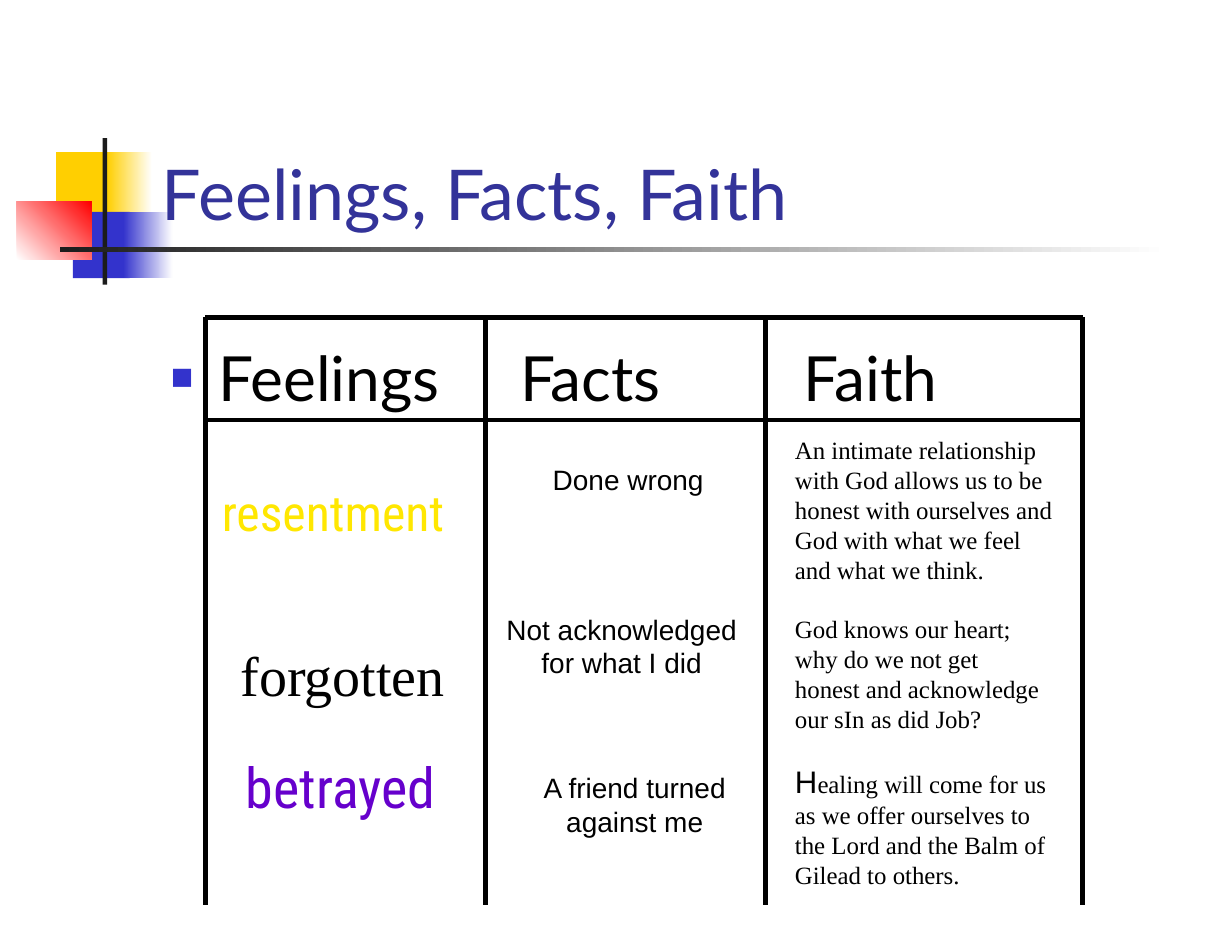
from lxml import etree
from pptx import Presentation
from pptx.dml.color import RGBColor
from pptx.enum.shapes import MSO_CONNECTOR, MSO_SHAPE
from pptx.enum.text import MSO_ANCHOR, PP_ALIGN
from pptx.oxml.ns import qn
from pptx.util import Inches, Pt

RECTANGLE = MSO_SHAPE.RECTANGLE
STRAIGHT = MSO_CONNECTOR.STRAIGHT
LEFT, CENTER = PP_ALIGN.LEFT, PP_ALIGN.CENTER
TOP, BOTTOM = MSO_ANCHOR.TOP, MSO_ANCHOR.BOTTOM

CELL = Inches(1 / 12)
COLUMNS, ROWS = 132, 102
BLACK, WHITE, YELLOW, BLUE = "000000", "FFFFFF", "FFCF01", "3333CC"
RED, CHARCOAL, INDIGO = "FF0000", "1C1C1C", "333399"

FEELINGS = [
    ("resentment", (0.2, 17, 27, 10), 32, "Roboto Condensed", "FFE701"),
    ("forgotten", (1.2, 34, 27, 8), 36, "Times New Roman", BLACK),
    ("betrayed", (1, 46, 27, 15), 36, "Roboto Condensed", "6600CC"),
]
FACTS = [
    (["Done wrong"], (6, 15, 18.6, 4.8)),
    (["Not acknowledged", "for what I did"], (1, 31, 27.2, 8.4)),
    (["A friend turned", "against me"], (5, 48, 22, 8.4)),
]
FAITH = [
    "An intimate relationship with God allows us to be honest with ourselves "
    "and God with what we feel and what we think.",
    "God knows our heart;",
    "why do we not get\vhonest and acknowledge our sIn as did Job?",
    "Healing will come for us as we offer ourselves to the Lord and the Balm "
    "of Gilead to others.",
]


def cells(*counts):
    return [round(count * CELL) for count in counts]


def color(value):
    return RGBColor.from_string(value)


def inside(box, part):
    return box[0] + part[0], box[1] + part[1], part[2], part[3]


def add_block(slide, box, colors, angle=0):
    block = slide.shapes.add_shape(RECTANGLE, *cells(*box))
    block.shadow.inherit = False
    block.line.fill.background()
    if len(colors) == 1:
        block.fill.solid()
        block.fill.fore_color.rgb = color(colors[0])
        return
    block.fill.gradient()
    block.fill.gradient_angle = angle
    for stop, value in zip(block.fill.gradient_stops, colors):
        stop.color.rgb = color(value)


def add_rule(slide, start, end):
    rule = slide.shapes.add_connector(STRAIGHT, *cells(*start, *end))
    rule.line.color.rgb = color(BLACK)
    rule.line.width = Pt(3)
    etree.SubElement(rule._element.spPr, qn("a:effectLst"))


def add_text(slide, box, lines, size, font, ink, align=LEFT, anchor=TOP,
             wrap=False, margins=(0.1, 0.05)):
    frame = slide.shapes.add_textbox(*cells(*box)).text_frame
    frame.word_wrap = wrap
    frame.vertical_anchor = anchor
    frame.margin_left = frame.margin_right = Inches(margins[0])
    frame.margin_top = frame.margin_bottom = Inches(margins[1])
    frame.text = "\n".join(lines)
    for paragraph in frame.paragraphs:
        paragraph.alignment = align
        paragraph.font.size = Pt(size)
        paragraph.font.name = font
        paragraph.font.color.rgb = color(ink)
    return frame


def add_bullet(paragraph, indent):
    properties = paragraph._p.get_or_add_pPr()
    properties.set("marL", str(Inches(indent)))
    properties.set("indent", str(-Inches(indent)))
    bullet_color = etree.Element(qn("a:buClr"))
    etree.SubElement(bullet_color, qn("a:srgbClr"), val=BLUE)
    bullet_size = etree.Element(qn("a:buSzPct"), val="60000")
    bullet_font = etree.Element(qn("a:buFont"), typeface="Arial")
    bullet_mark = etree.Element(qn("a:buChar"), char="■")
    parts = (bullet_color, bullet_size, bullet_font, bullet_mark)
    for place, part in enumerate(parts):
        properties.insert(place, part)


def add_ornament(slide, box):
    for part, colors, angle in [
        ((4.2, 1.5, 6.4, 7.1), [YELLOW], 0),
        ((9.7, 1.5, 4.8, 7.1), [YELLOW, WHITE], 0),
        ((6, 7.9, 6.1, 7.1), [BLUE], 0),
        ((11.4, 7.9, 5.3, 7.1), [BLUE, WHITE], 0),
        ((0, 6.8, 8, 6.2), [WHITE, RED], 45),
        ((9.2, 0, 0.5, box[3]), [CHARCOAL], 0),
        ((4.6, 11.7, box[2] - 4.6, 0.5), [CHARCOAL, WHITE], 0),
    ]:
        add_block(slide, inside(box, part), colors, angle)


def add_title(slide, box):
    add_text(slide, box, ["Feelings, Facts, Faith"], 45, "Lato", INDIGO,
             anchor=BOTTOM, wrap=True, margins=(0.11, 0.06))


def add_headings(slide, box):
    for heading, offset, width in [("Feelings", -5, 34), ("Facts", 32.4, 28),
                                   ("Faith", 62.8, 28)]:
        frame = add_text(slide, inside(box, (offset, 1.6, width, 9)),
                         [heading], 40, "Lato", BLACK, wrap=True,
                         margins=(0.11, 0.06))
        if heading == "Feelings":
            add_bullet(frame.paragraphs[0], 0.42)


def add_grid(slide, box, dividers, header):
    left, top, width, height = box
    for row in (0, header):
        add_rule(slide, (left, top + row), (left + width, top + row))
    for column in (0, *dividers, width):
        add_rule(slide, (left + column, top), (left + column, top + height))


def add_feelings(slide, box):
    for word, part, size, font, ink in FEELINGS:
        add_text(slide, inside(box, part), [word], size, font, ink, CENTER,
                 margins=(0, 0.05))


def add_facts(slide, box):
    for lines, part in FACTS:
        add_text(slide, inside(box, part), lines, 18, "Arial", BLACK, CENTER)


def add_faith(slide, box):
    frame = add_text(slide, inside(box, (2, 12, 30, 50)), FAITH, 16,
                     "Times New Roman", BLACK, wrap=True)
    opening, question, _, healing = frame.paragraphs
    for paragraph in (question, healing):
        paragraph.space_before = Pt(19)
    rest = healing.runs[0]
    initial, rest.text = rest.text[0], rest.text[1:]
    capital = healing.add_run()
    capital.text = initial
    capital.font.size = Pt(20)
    capital.font.name = "Arial"
    rest._r.addprevious(capital._r)


def main():
    deck = Presentation()
    deck.slide_width, deck.slide_height = cells(COLUMNS, ROWS)
    slide = deck.slides.add_slide(deck.slide_layouts[6])
    table = (22, 34, 94, 63)
    dividers = (30, 60)
    add_ornament(slide, (1.8, 14.8, 123.4, 15.7))
    add_title(slide, (16, 16, 112.4, 9.8))
    add_headings(slide, table)
    add_grid(slide, table, dividers, 11)
    add_feelings(slide, inside(table, (0, 0, 30, 63)))
    add_facts(slide, inside(table, (dividers[0], 0, 30, 63)))
    add_faith(slide, inside(table, (dividers[1], 0, 34, 63)))
    deck.save("out.pptx")


if __name__ == "__main__":
    main()
